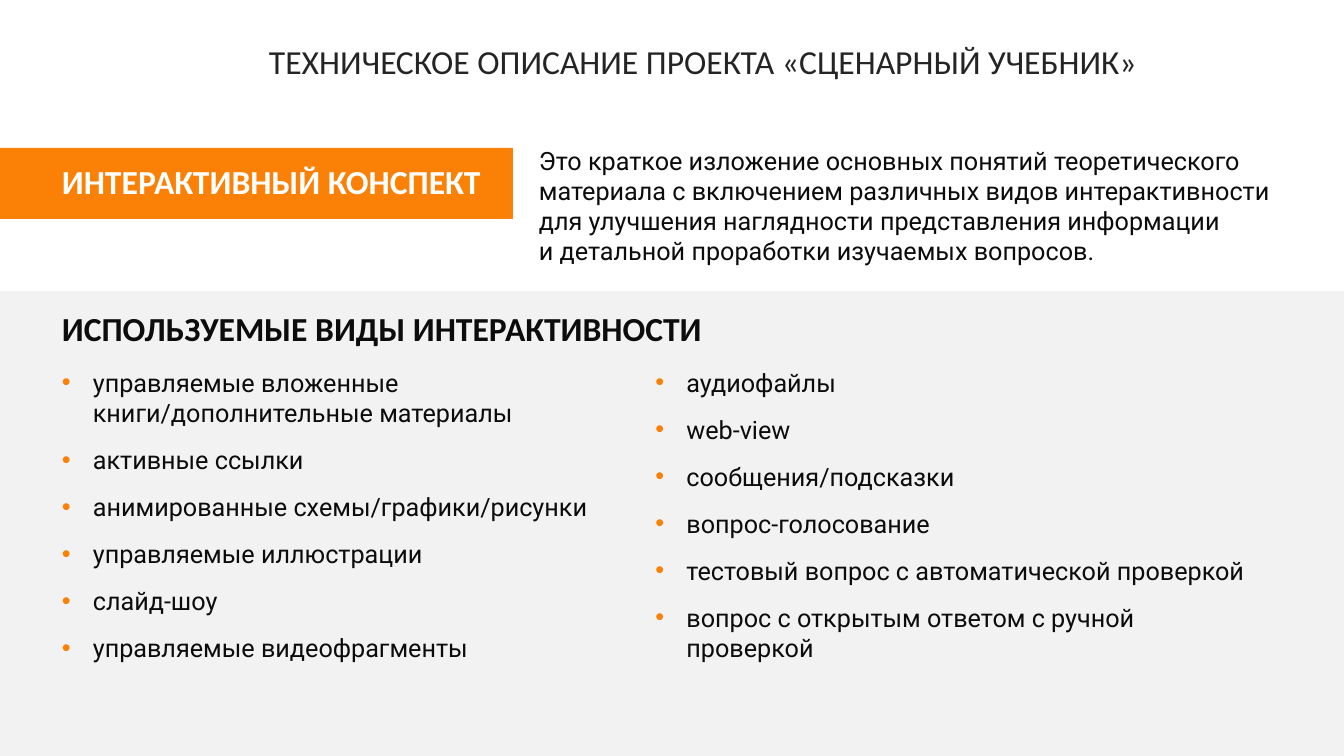
"""Build the slide describing the interactive synopsis and its kinds of interactivity."""
from lxml.etree import SubElement
from pptx import Presentation
from pptx.dml.color import RGBColor
from pptx.enum.shapes import MSO_SHAPE as Shape
from pptx.enum.text import MSO_ANCHOR as Anchor, PP_ALIGN as Align
from pptx.oxml.ns import qn
from pptx.util import Pt

TITLE = "ТЕХНИЧЕСКОЕ ОПИСАНИЕ ПРОЕКТА «СЦЕНАРНЫЙ УЧЕБНИК»"
TOPIC = "ИНТЕРАКТИВНЫЙ КОНСПЕКТ"
KINDS_HEADING = "ИСПОЛЬЗУЕМЫЕ ВИДЫ ИНТЕРАКТИВНОСТИ"
DESCRIPTION = [
    "Это краткое изложение основных понятий теоретического материала "
    "с включением различных видов интерактивности",
    "для улучшения наглядности представления информации",
    "и детальной проработки изучаемых вопросов.",
]
KINDS = [
    "управляемые вложенные книги/дополнительные материалы",
    "активные ссылки",
    "анимированные схемы/графики/рисунки",
    "управляемые иллюстрации",
    "слайд-шоу",
    "управляемые видеофрагменты",
    "аудиофайлы",
    "web-view",
    "сообщения/подсказки",
    "вопрос-голосование",
    "тестовый вопрос с автоматической проверкой",
    "вопрос с открытым ответом с ручной проверкой",
]

ORANGE = RGBColor(0xFA, 0x80, 0x06)
PALE = RGBColor(0xF2, 0xF2, 0xF2)
WHITE = RGBColor(0xFF, 0xFF, 0xFF)
CHARCOAL = RGBColor(0x24, 0x24, 0x24)
INK = RGBColor(0x0C, 0x0C, 0x0C)

WIDTH, HEIGHT = 1344, 756
MARGIN = 52
BAND_TOP = 291
BULLET_INDENT = 31


def px(length):
    """Turn px into EMU."""
    return round(length * 914400 / 100.8)


def add_band(slide, left, top, width, height, color):
    """Add a plain filled rectangle."""
    band = slide.shapes.add_shape(Shape.RECTANGLE, *map(px, (left, top, width, height)))
    band.shadow.inherit = False
    band.fill.solid()
    band.fill.fore_color.rgb = color
    band.line.fill.background()


def add_bullet(paragraph):
    """Give a paragraph an orange bullet with a hanging indent."""
    properties = paragraph._p.get_or_add_pPr()
    properties.set("marL", str(px(BULLET_INDENT)))
    properties.set("indent", str(-px(BULLET_INDENT)))
    color = SubElement(properties, qn("a:buClr"))
    SubElement(color, qn("a:srgbClr"), val=str(ORANGE))
    SubElement(properties, qn("a:buFont"), typeface="Arial")
    SubElement(properties, qn("a:buChar"), char="•")
    paragraph.space_after = Pt(12)


def add_text(slide, lines, box, font, size, color, bold=False, columns=1):
    """Add a text box; several columns make it a bulleted list."""
    frame = slide.shapes.add_textbox(*map(px, box)).text_frame
    frame.word_wrap = True
    frame.vertical_anchor = Anchor.TOP
    if columns > 1:
        frame._txBody.bodyPr.set("numCol", str(columns))
    for index, line in enumerate(lines):
        paragraph = frame.add_paragraph() if index else frame.paragraphs[0]
        paragraph.alignment = Align.LEFT
        if columns > 1:
            add_bullet(paragraph)
        run = paragraph.add_run()
        run.text = line
        run.font.name = font
        run.font.size = Pt(size)
        run.font.bold = bold
        run.font.color.rgb = color


def main():
    """Lay out the slide and save it."""
    presentation = Presentation()
    presentation.slide_width, presentation.slide_height = px(WIDTH), px(HEIGHT)
    slide = presentation.slides.add_slide(presentation.slide_layouts[6])
    add_band(slide, 0, 148, 513, 71, ORANGE)
    add_band(slide, 0, BAND_TOP, WIDTH, HEIGHT - BAND_TOP, PALE)
    add_text(slide, [TITLE], (259, 36, 920, 65), "Calibri", 24, CHARCOAL)
    add_text(slide, DESCRIPTION, (529, 140, 754, 158), "Roboto", 18, INK)
    add_text(slide, KINDS, (MARGIN, 362, 1207, 326), "Roboto", 18, INK, columns=2)
    add_text(slide, [TOPIC], (MARGIN, 156, 453, 50), "Calibri", 24, WHITE, bold=True)
    add_text(slide, [KINDS_HEADING], (MARGIN, 303, 817, 50), "Calibri", 24, INK, bold=True)
    presentation.save("out.pptx")


if __name__ == "__main__":
    main()
